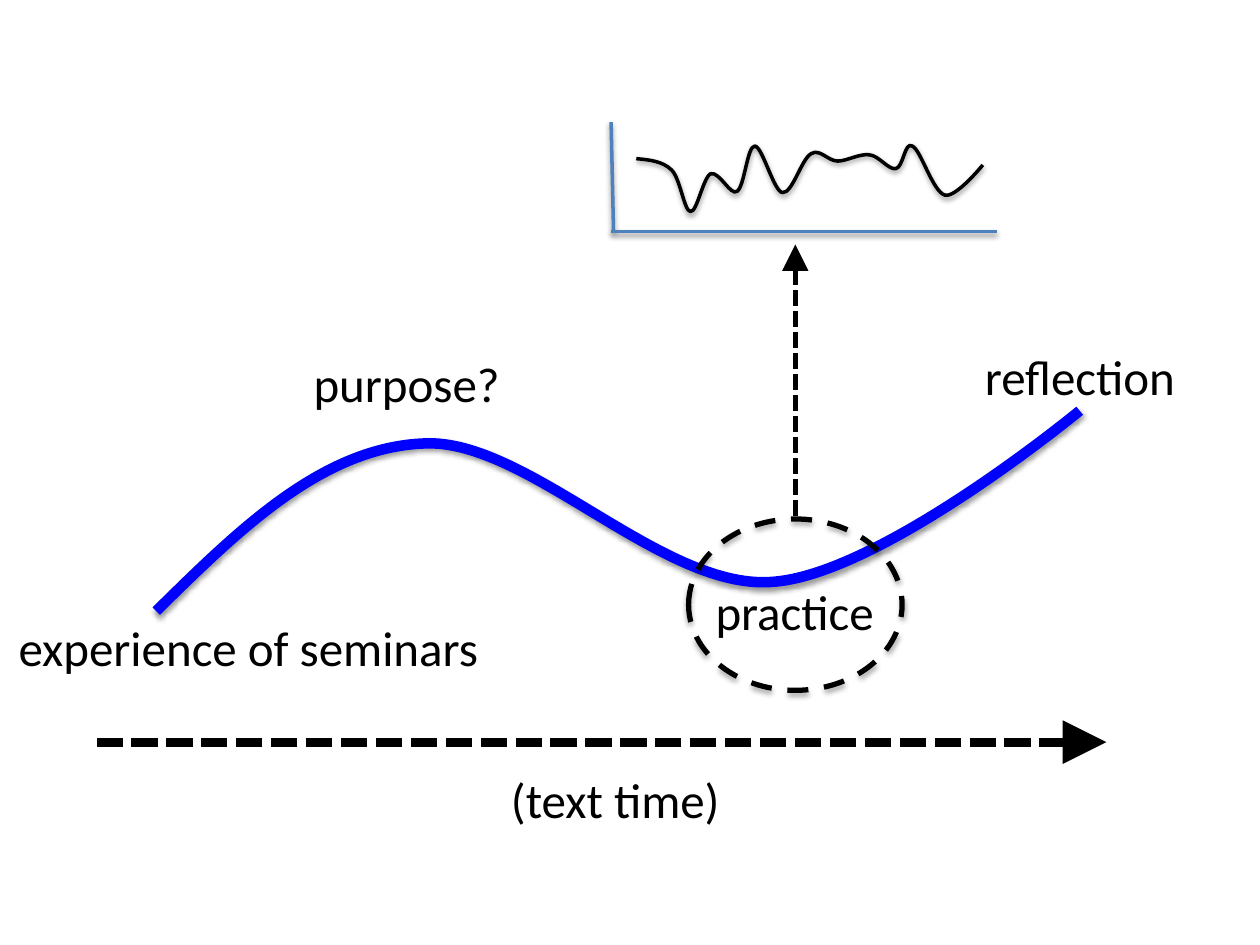
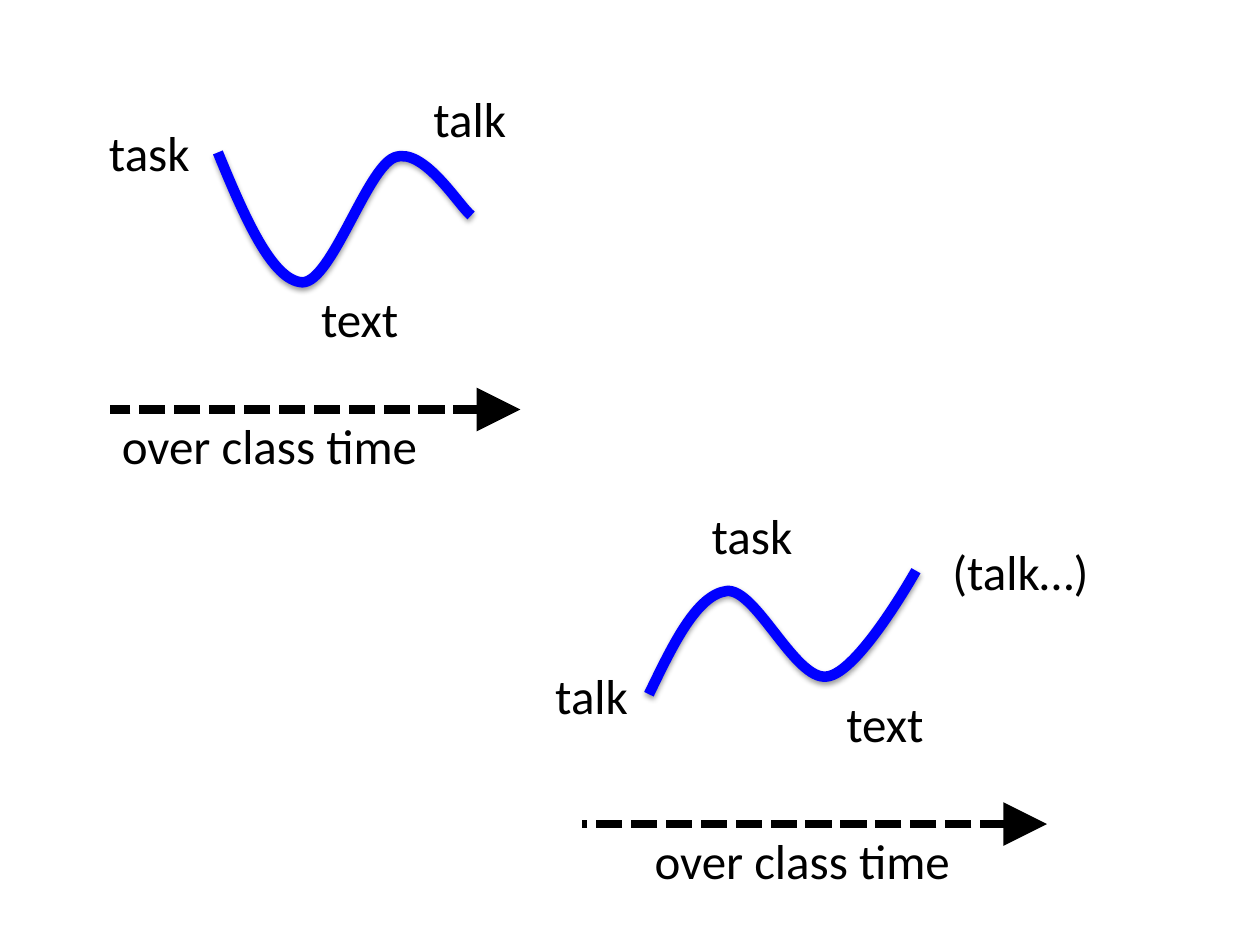
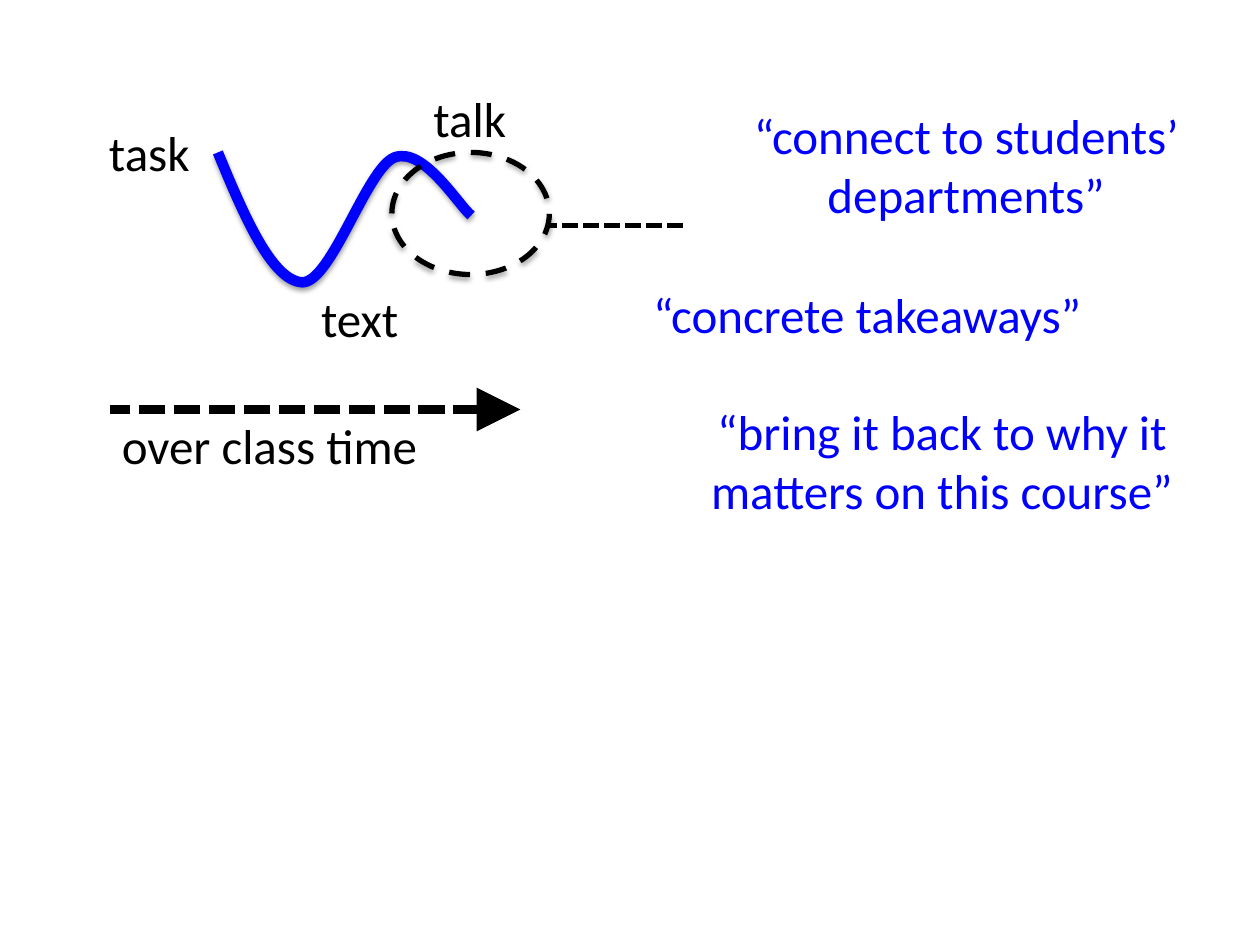
from lxml import etree
from pptx import Presentation
from pptx import util as u
from pptx.dml import color
from pptx.enum import dml, shapes, text
from pptx.oxml import ns

Pt = u.Pt
BLACK, WHITE, BLUE, STEEL = "000000", "FFFFFF", "0000FF", "4F81BD"
FONT, SIZE, ROW = "Calibri", 28, 41

STORY = [(85.7, 154.8), (133.2, 108), (180.7, 61.2), (239, 59), (297.4, 56.2),
         (373.7, 141.8), (436.3, 138.2), (498.2, 135.4), (613.4, 40.3), (613.4, 40.3)]
DETAIL = [(14.4, 20.9), (21.6, 21.6), (29.5, 22.3), (34.6, 27.4), (39.6, 32.4),
          (41.8, 51.1), (45.4, 51.1), (49, 51.8), (52.6, 31.7), (56.9, 29.5),
          (61.9, 28.1), (68.4, 42.5), (72, 39.6), (76.3, 36.7), (77.8, 13.7),
          (82.1, 13.7), (86.4, 13.7), (92.9, 39.6), (97.9, 40.3), (103.7, 41),
          (108.7, 20.9), (114.5, 18), (119.5, 15.1), (123.8, 22.3), (129.6, 22.3),
          (134.6, 22.3), (141.8, 18), (147.6, 18.7), (153.4, 19.4), (158.4, 27.4),
          (162.7, 26.6), (167, 25.9), (167.8, 10.8), (172.1, 13.7), (177.1, 15.8),
          (183.6, 39.6), (190.8, 41.8), (197.3, 43.2), (212.4, 24.5), (212.4, 24.5)]
DIP = [(61.9, 39.9), (77, 76.6), (92.9, 113.3), (110.2, 114.1), (126.7, 114.1),
       (146.9, 49.3), (162.7, 42.8), (179.3, 36.3), (199.4, 70.1), (206.6, 75.9)]
RISE = [(38.2, 111.6), (51.8, 83.5), (65.5, 54.7), (82.8, 52.6), (99.4, 51.1),
        (121.7, 103.7), (139.7, 101.5), (157.7, 100.1), (190.8, 41), (190.8, 41)]


def rgb(code):
    """Turn a hex string into a colour."""
    return color.RGBColor.from_string(code)


def shade(part, alpha=0, dist=1.6):
    """Give a part a soft shadow below it, or none when alpha is zero."""
    glow = etree.SubElement(part._element.spPr, ns.qn("a:effectLst"))
    if alpha:
        drop = etree.SubElement(glow, ns.qn("a:outerShdw"), blurRad=str(Pt(3.1)),
                                dist=str(Pt(dist)), dir="5400000", rotWithShape="0")
        tint = etree.SubElement(drop, ns.qn("a:srgbClr"), val=BLACK)
        etree.SubElement(tint, ns.qn("a:alpha"), val=str(alpha * 1000))


def stroke(part, hue, width, dash=None):
    """Set the colour, width and dash of an outline."""
    part.line.color.rgb = rgb(hue)
    part.line.width = Pt(width)
    if dash:
        part.line.dash_style = dash


def write(part, words, hue, wrap, mid=False):
    """Put one run of text in a part that grows with it."""
    frame = part.text_frame
    frame.word_wrap = wrap
    frame.auto_size = text.MSO_AUTO_SIZE.SHAPE_TO_FIT_TEXT
    para = frame.paragraphs[0]
    para.alignment = text.PP_ALIGN.CENTER if mid else text.PP_ALIGN.LEFT
    run = para.add_run()
    run.text = words
    run.font.name, run.font.size = FONT, Pt(SIZE)
    run.font.color.rgb = rgb(hue)


def label(page, words, box, hue=BLACK, wrap=False, mid=False):
    """Write one text box."""
    write(page.shapes.add_textbox(*map(Pt, box)), words, hue, wrap, mid)


def plate(page, words, box):
    """Write text on a white rectangle."""
    part = page.shapes.add_shape(shapes.MSO_SHAPE.RECTANGLE, *map(Pt, box))
    part.fill.solid()
    part.fill.fore_color.rgb = rgb(WHITE)
    part.line.fill.background()
    part.shadow.inherit = False
    part.text_frame.vertical_anchor = text.MSO_ANCHOR.TOP
    write(part, words, BLACK, True)


def rule(page, start, end, hue, width, dash=None, head=False, alpha=0):
    """Draw a straight line, with an arrowhead at its start if asked."""
    part = page.shapes.add_connector(shapes.MSO_CONNECTOR.STRAIGHT,
                                     *map(Pt, (*start, *end)))
    stroke(part, hue, width, dash)
    if head:
        edge = part._element.spPr.find(ns.qn("a:ln"))
        etree.SubElement(edge, ns.qn("a:headEnd"), type="triangle", w="lg", len="lg")
    shade(part, alpha)
    return part


def curve(part):
    """Turn each three straight segments into one cubic segment."""
    legs = list(part._element.spPr.iter(ns.qn("a:lnTo")))
    for i in range(0, len(legs), 3):
        trio = legs[i:i + 3]
        bend = etree.Element(ns.qn("a:cubicBezTo"))
        trio[0].addprevious(bend)
        for leg in trio:
            bend.append(leg[0])
            leg.getparent().remove(leg)


def wave(page, left, top, knots, hue, width):
    """Draw an open curve through cubic knots given relative to a corner."""
    dots = [(Pt(left + x), Pt(top + y)) for x, y in knots]
    pen = page.shapes.build_freeform(*dots[0])
    pen.add_line_segments(dots[1:], close=False)
    part = pen.convert_to_shape()
    curve(part)
    part.fill.background()
    stroke(part, hue, width)
    shade(part, 38)


def ring(page, box):
    """Draw a dashed ellipse."""
    part = page.shapes.add_shape(shapes.MSO_SHAPE.OVAL, *map(Pt, box))
    part.fill.background()
    stroke(part, BLACK, 3, dml.MSO_LINE.DASH)
    shade(part, 35, 1.8)
    return part


def clock(page, left, right, y):
    """Draw the dashed time arrow."""
    rule(page, (right, y), (left, y), BLACK, 5, dml.MSO_LINE.SQUARE_DOT, True)


def story(page, left, top):
    """Draw the long wave with its stages and return the ring on practice."""
    label(page, "experience of seminars", (left, top + 154.8, 280.8, ROW))
    label(page, "purpose?", (left + 168.5, top + 4.3, 164.9, ROW), wrap=True)
    plate(page, "practice", (left + 398.2, top + 134.6, 133.9, ROW))
    label(page, "reflection", (left + 524.2, top, 178.6, ROW), wrap=True, mid=True)
    wave(page, left, top, STORY, BLUE, 6)
    return ring(page, (left + 389.9, top + 102.2, 122, 97.9))


def inset(page, left, top, width, height):
    """Draw the small plot of the detail."""
    base = top + height
    wave(page, left, top, DETAIL, BLACK, 2)
    rule(page, (left, top), (left + 1.4, base), STEEL, 2, alpha=38)
    rule(page, (left, base), (left + width, base), STEEL, 2, alpha=38)


def cycle(page, box, knots, tags, shift=0):
    """Draw one class: wave, tags, time arrow and caption."""
    left, top, width, height = box
    foot = top + height - ROW
    wave(page, left, top, knots, BLUE, 6)
    for words, x, y, span, wrap in tags:
        label(page, words, (left + x, top + y, span, ROW), wrap=wrap)
    clock(page, left, left + width, foot)
    label(page, "over class time", (left + shift, foot, 185.8, ROW))


def first(page):
    """Draw the class that starts from a task."""
    cycle(page, (62.6, 47.2, 234.7, 227.8), DIP,
          [("task", -7.4, 19.4, 61.2, False), ("text", 113.8, 114.1, 59.8, False),
           ("talk", 178, 0, 56.9, False)])


def second(page):
    """Draw the class that starts from talk."""
    cycle(page, (332.6, 285.1, 265.7, 226.8), RISE,
          [("talk", -22.4, 91.4, 56.9, False), ("task", 67, 0, 61.2, False),
           ("text", 144, 107.8, 59.8, False), ("(talk…)", 204.5, 20.9, 123.1, True)], 34.4)


def course(page):
    """Build the slide on the whole text."""
    focus = story(page, 3.6, 194.4)
    clock(page, 54.7, 632.2, 424.1)
    label(page, "(text time)", (284.9, 436.3, 136.1, ROW))
    beam = rule(page, (454.5, 139.7), (454.5, 296.6), BLACK, 3, dml.MSO_LINE.SQUARE_DOT, True)
    beam.end_connect(focus, 0)
    inset(page, 349.2, 69.8, 220.3, 62.6)


def lessons(page):
    """Build the slide with both classes."""
    first(page)
    second(page)


def closing(page):
    """Build the slide on the final talk."""
    first(page)
    ring(page, (223.9, 87.1, 90, 69.8))
    rule(page, (390.2, 128.9), (313.9, 128.9), BLACK, 3, dml.MSO_LINE.SQUARE_DOT)
    for words, box in (
            ("“connect to students’ departments”", (409.9, 56.9, 284.4, 74.9)),
            ("“concrete takeaways”", (347.2, 159.1, 296.6, ROW)),
            ("“bring it back to why it matters on this course”", (374.4, 226.1, 327.6, 74.9))):
        label(page, words, box, BLUE, True, True)


def main():
    """Build and save the deck."""
    deck = Presentation()
    deck.slide_width, deck.slide_height = Pt(720), Pt(540)
    for build in (course, lessons, closing):
        build(deck.slides.add_slide(deck.slide_layouts[6]))
    deck.save("out.pptx")


if __name__ == "__main__":
    main()
